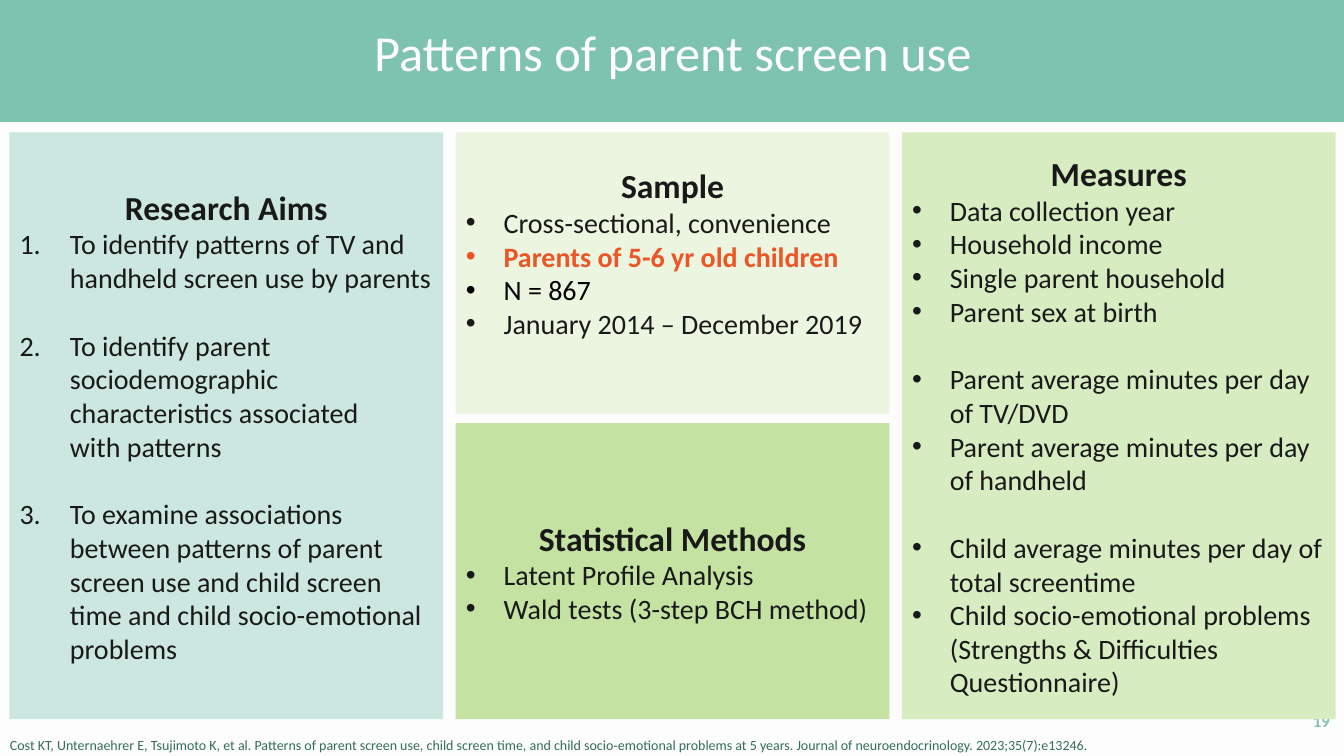
import copy
import pptx
import pptx.dml.color
import pptx.enum.text
import pptx.oxml.ns
import pptx.util
import lxml.etree

RGBColor = pptx.dml.color.RGBColor
PAPER = RGBColor(0xFD, 0xFD, 0xFD)
TEAL = RGBColor(0x7E, 0xC2, 0xB0)
PALE_TEAL = RGBColor(0xCB, 0xE7, 0xDF)
PALE_GREEN = RGBColor(0xEB, 0xF5, 0xE0)
SOFT_GREEN = RGBColor(0xD7, 0xEC, 0xC1)
GREEN = RGBColor(0xC4, 0xE2, 0xA2)
DARK_GREEN = RGBColor(0x33, 0x6D, 0x5D)
INK = RGBColor(0x19, 0x19, 0x19)
BLACK = RGBColor(0, 0, 0)
ORANGE = RGBColor(0xEC, 0x55, 0x25)

EMU_PER_PX = 9525
PANEL_LEFT, PANEL_TOP = 9, 126
PANEL_WIDTH, PANEL_HEIGHT = 413, 559
COLUMN_PITCH = 425
SAMPLE_HEIGHT, PANEL_GAP = 268, 9
METHODS_TOP = PANEL_TOP + SAMPLE_HEIGHT + PANEL_GAP
METHODS_HEIGHT = PANEL_HEIGHT - SAMPLE_HEIGHT - PANEL_GAP
GROUP_GAP = pptx.util.Pt(24.4)

LEFT = pptx.enum.text.PP_ALIGN.LEFT
CENTER = pptx.enum.text.PP_ALIGN.CENTER
RIGHT = pptx.enum.text.PP_ALIGN.RIGHT
TOP = pptx.enum.text.MSO_ANCHOR.TOP
MIDDLE = pptx.enum.text.MSO_ANCHOR.MIDDLE
DOT = ("a:buChar", "char", "•", 36)
NUMBER = ("a:buAutoNum", "type", "arabicPeriod", 48)

AIMS = [
    ("To identify patterns of TV and handheld screen use by parents", {}),
    ("To identify parent sociodemographic characteristics associated \vwith patterns",
     {"space_before": GROUP_GAP}),
    ("To examine associations between patterns of parent screen use and child "
     "screen time and child socio-emotional problems", {"space_before": GROUP_GAP}),
]
SAMPLE = [
    ("Cross-sectional, convenience", {}),
    ("Parents of 5-6 yr old children", {"color": ORANGE, "bold": True}),
    ("N = 867", {"color": BLACK}),
    ("January 2014 – December 2019", {}),
]
METHODS = [
    ("Latent Profile Analysis", {}),
    ("Wald tests (3-step BCH method)", {}),
]
MEASURES = [
    ("Data collection year", {}),
    ("Household income", {}),
    ("Single parent household", {}),
    ("Parent sex at birth", {}),
    ("Parent average minutes per day of TV/DVD", {"space_before": GROUP_GAP}),
    ("Parent average minutes per day of handheld", {}),
    ("Child average minutes per day of total screentime", {"space_before": GROUP_GAP}),
    ("Child socio-emotional problems (Strengths & Difficulties Questionnaire)", {}),
]
CITATION = (
    "Cost KT, Unternaehrer E, Tsujimoto K, et al. Patterns of parent screen use, "
    "child screen time, and child socio‐emotional problems at 5 years. "
    "Journal of neuroendocrinology. 2023;35(7):e13246."
)


def px(length):
    return pptx.util.Emu(length * EMU_PER_PX)


def apply_format(target, values):
    for attribute, value in values.items():
        setattr(target, attribute, value)


def write(paragraph, text, size, color=INK, bold=False, **layout):
    paragraph.text = text
    apply_format(paragraph, {"alignment": LEFT, "space_before": pptx.util.Pt(0)} | layout)
    for run in paragraph.runs:
        apply_format(run.font, {"name": "Calibri", "size": pptx.util.Pt(size), "bold": bold})
        run.font.color.rgb = color
    for line_break in paragraph._p.findall(pptx.oxml.ns.qn("a:br")):
        line_break.append(copy.deepcopy(paragraph.runs[0]._r.rPr))


def mark(paragraph, tag, key=None, value=None, indent=0):
    properties = paragraph._p.get_or_add_pPr()
    properties.set("marL", str(px(indent)))
    properties.set("indent", str(px(-indent)))
    bullet = lxml.etree.SubElement(properties, pptx.oxml.ns.qn(tag))
    if key:
        bullet.set(key, value)


def place(shape, box, anchor=MIDDLE):
    apply_format(shape, dict(zip(("left", "top", "width", "height"), map(px, box))))
    apply_format(shape.text_frame, {
        "word_wrap": True,
        "auto_size": pptx.enum.text.MSO_AUTO_SIZE.NONE,
        "vertical_anchor": anchor,
    })


def fill_with(target, color):
    target.fill.solid()
    target.fill.fore_color.rgb = color


def add_panel(panel, column, top, height, color, heading, items, bullet=DOT):
    place(panel, (PANEL_LEFT + column * COLUMN_PITCH, top, PANEL_WIDTH, height))
    fill_with(panel, color)
    heading_line = panel.text_frame.paragraphs[0]
    write(heading_line, heading, 24, bold=True, alignment=CENTER)
    mark(heading_line, "a:buNone")
    for text, style in items:
        item_line = panel.text_frame.add_paragraph()
        write(item_line, text, 20, **style)
        mark(item_line, *bullet)


def add_note(slide, box, text, anchor, **style):
    note = slide.shapes.add_textbox(0, 0, 0, 0)
    place(note, box, anchor)
    write(note.text_frame.paragraphs[0], text, **style)
    slide.shapes._spTree.insert(2, note._element)


def main():
    deck = pptx.Presentation()
    apply_format(deck, {"slide_width": px(1280), "slide_height": px(720)})
    slide = deck.slides.add_slide(deck.slide_layouts.get_by_name("Comparison"))
    fill_with(slide.background, PAPER)

    banner = slide.shapes.title
    place(banner, (0, 0, 1282, 116))
    fill_with(banner, TEAL)
    write(banner.text_frame.paragraphs[0], "Patterns of parent screen use", 36, PAPER,
          alignment=CENTER, line_spacing=pptx.util.Pt(30.2))

    aims, sample, methods, measures = list(slide.placeholders)[1:]
    add_panel(aims, 0, PANEL_TOP, PANEL_HEIGHT, PALE_TEAL, "Research Aims", AIMS, NUMBER)
    add_panel(sample, 1, PANEL_TOP, SAMPLE_HEIGHT, PALE_GREEN, "Sample", SAMPLE)
    sample.text_frame.margin_bottom = px(44)
    add_panel(methods, 1, METHODS_TOP, METHODS_HEIGHT, GREEN, "Statistical Methods", METHODS)
    add_panel(measures, 2, PANEL_TOP, PANEL_HEIGHT, SOFT_GREEN, "Measures", MEASURES)

    add_note(slide, (1116, 667, 160, 38), "19", MIDDLE,
             size=12, color=TEAL, bold=True, alignment=RIGHT)
    add_note(slide, (0, 697, 1280, 26), CITATION, TOP, size=10, color=DARK_GREEN)
    deck.save("out.pptx")


if __name__ == "__main__":
    main()
